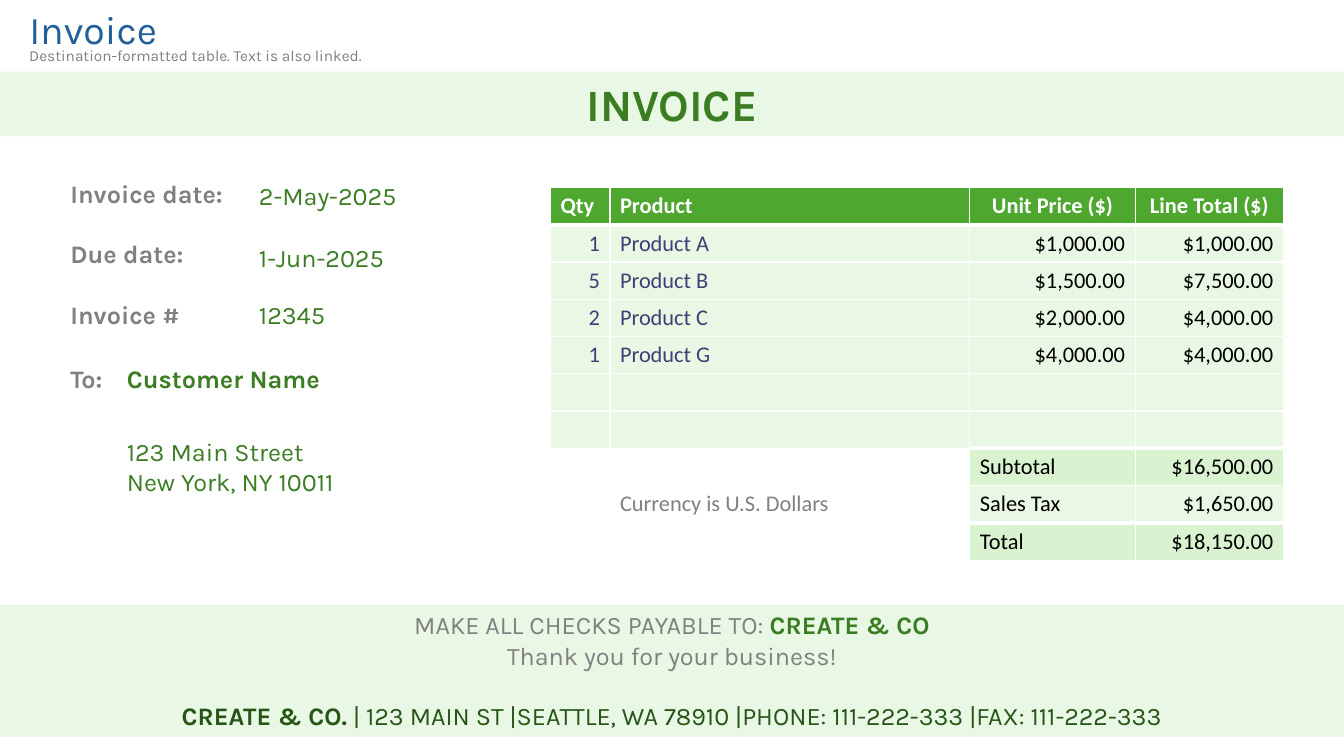
from lxml import etree
from pptx import Presentation
from pptx.dml.color import RGBColor
from pptx.enum.shapes import MSO_SHAPE
from pptx.enum.text import MSO_ANCHOR, MSO_AUTO_SIZE, PP_ALIGN
from pptx.oxml.ns import qn
from pptx.util import Inches, Pt

RECT = MSO_SHAPE.RECTANGLE
TOP, MIDDLE, BOTTOM = MSO_ANCHOR.TOP, MSO_ANCHOR.MIDDLE, MSO_ANCHOR.BOTTOM
LEFT, CENTER, RIGHT = PP_ALIGN.LEFT, PP_ALIGN.CENTER, PP_ALIGN.RIGHT
NO_FIT = MSO_AUTO_SIZE.NONE

WHITE, BLACK, GRAY = "FFFFFF", "000000", "808080"
BLUE, NAVY = "215F9A", "3F3F76"
GREEN, DARK, HEAD = "3B7D23", "275417", "4EA72E"
PALE, SOFT = "E9F8E4", "D9F2D0"
GAP = 21.5  # one line of 18 pt text

COLS = [0.59, 3.57, 1.64, 1.47]
ALIGNS = [RIGHT, LEFT, RIGHT, RIGHT]
ROWS = [
    ["Qty", "Product", "Unit Price ($)", "Line Total ($)"],
    ["1", "Product A", "$1,000.00", "$1,000.00"],
    ["5", "Product B", "$1,500.00", "$7,500.00"],
    ["2", "Product C", "$2,000.00", "$4,000.00"],
    ["1", "Product G", "$4,000.00", "$4,000.00"],
    ["", "", "", ""],
    ["", "", "", ""],
    ["", "", "Subtotal", "$16,500.00"],
    ["", "Currency is U.S. Dollars", "Sales Tax", "$1,650.00"],
    ["", "", "Total", "$18,150.00"],
]
SUMS = 7  # first row of the totals


def rgb(code):
    return RGBColor.from_string(code)


def style(run, size, color, bold=False, face="Karla"):
    run.font.size = Pt(size)
    run.font.name = face
    run.font.bold = bold
    run.font.color.rgb = rgb(color)


def label(slide, box, text, color, bold=False, size=18, gap=0):
    """Add a text box; gap is the space in points between paragraphs."""
    frame = slide.shapes.add_textbox(*map(Inches, box)).text_frame
    frame.word_wrap = True
    frame.text = text
    for i, para in enumerate(frame.paragraphs):
        para.space_before = Pt(gap if i else 0)
        for run in para.runs:
            style(run, size, color, bold)


def band(slide, box, lines, size):
    """Add a full-width band; each line is a list of (text, color, bold)."""
    shape = slide.shapes.add_shape(RECT, *map(Inches, box))
    shape.shadow.inherit = False
    shape.fill.solid()
    shape.fill.fore_color.rgb = rgb(PALE)
    shape.line.fill.background()
    frame = shape.text_frame
    frame.vertical_anchor = TOP
    for i, line in enumerate(lines):
        para = frame.add_paragraph() if i else frame.paragraphs[0]
        para.alignment = CENTER
        for text, color, bold in line:
            run = para.add_run()
            run.text = text
            style(run, size, color, bold)
    return frame


def heading(slide, box):
    # Title and the line under it
    x, y, w, h = box
    title = slide.shapes.title
    title.left, title.top, title.width, title.height = map(Inches, box)
    frame = title.text_frame
    frame.text = "Invoice"
    frame.auto_size = NO_FIT
    frame.vertical_anchor = MIDDLE
    para = frame.paragraphs[0]
    para.alignment = LEFT
    para.line_spacing = 0.9
    style(para.runs[0], 28, BLUE)
    label(slide, (x, y + 0.41, 5.19, 0.29),
          "Destination-formatted table. Text is also linked.", GRAY, size=11)


def details(slide, box):
    # Dates and number
    x, y, w, h = box
    label(slide, (x, y, 1.93, 1.62), "Invoice date:\nDue date:\nInvoice #",
          GRAY, True, gap=GAP)
    values = [(0.02, "2-May-2025"), (0.63, "1-Jun-2025"), (1.2, "12345")]
    for drop, text in values:
        label(slide, (x + 1.87, y + drop, 2.91, 0.4), text, GREEN)
    # Customer
    label(slide, (x, y + 1.84, 0.84, 0.4), "To:", GRAY, True)
    label(slide, (x + 0.56, y + 1.84, 4.07, 0.4), "Customer Name", GREEN, True)
    label(slide, (x + 0.56, y + 2.56, 4.07, 0.71),
          "123 Main Street\vNew York, NY 10011", GREEN)


def edge(cell, side, width):
    line = etree.SubElement(cell._tc.get_or_add_tcPr(), qn("a:ln" + side),
                            w=str(Pt(width)))
    fill = etree.SubElement(line, qn("a:solidFill"))
    etree.SubElement(fill, qn("a:srgbClr"), val=WHITE)


def rule(row, col):
    """Width of the line below a row."""
    return 3 if row == 0 or (row in (6, 8) and col > 1) else 1


def look(row, col):
    """Fill, text color and alignment of a cell."""
    if row == 0:
        return HEAD, WHITE, CENTER if col > 1 else LEFT
    if row < SUMS:
        return PALE, NAVY if col < 2 else BLACK, ALIGNS[col]
    if col < 2:
        return None, GRAY, LEFT
    return PALE if row == 8 else SOFT, BLACK, RIGHT if col == 3 else LEFT


def items(slide, box):
    table = slide.shapes.add_table(len(ROWS), len(COLS),
                                   *map(Inches, box)).table
    table.first_row = table.horz_banding = False
    for column, width in zip(table.columns, COLS):
        column.width = Inches(width)
    for r, texts in enumerate(ROWS):
        table.rows[r].height = Inches(box[3] / len(ROWS))
        for c, text in enumerate(texts):
            cell = table.cell(r, c)
            fill, color, align = look(r, c)
            # Borders go ahead of the fill
            for side, width in (("L", 1), ("R", 1), ("T", rule(r - 1, c)),
                                ("B", rule(r, c))):
                edge(cell, side, width)
            if fill:
                cell.fill.solid()
                cell.fill.fore_color.rgb = rgb(fill)
            else:
                cell.fill.background()
            cell.vertical_anchor = BOTTOM
            para = cell.text_frame.paragraphs[0]
            para.alignment = align
            if text:
                para.text = text
                style(para.runs[0], 16, color, r == 0, "Calibri")
            else:
                etree.SubElement(para._p, qn("a:endParaRPr"), sz="1600")


def footer(slide, box):
    frame = band(slide, box, [
        [("MAKE ALL CHECKS PAYABLE TO: ", GRAY, False),
         ("CREATE & CO", GREEN, True)],
        [("Thank you for your business!", GRAY, False)],
        [("CREATE & CO.", DARK, True),
         (" | 123 MAIN ST |SEATTLE, WA 78910 |PHONE: 111-222-333 "
          "|FAX: 111-222-333", DARK, False)],
    ], 18)
    frame.paragraphs[2].space_before = Pt(GAP)


def main():
    deck = Presentation()
    deck.slide_width, deck.slide_height = Inches(13.33), Inches(7.5)
    slide = deck.slides.add_slide(deck.slide_layouts[5])
    heading(slide, (0.19, 0, 11.5, 0.64))
    band(slide, (0, 0.71, 13.33, 0.64), [[("INVOICE", GREEN, True)]], 32)
    details(slide, (0.6, 1.72, 4.78, 3.27))
    items(slide, (5.46, 1.86, 7.27, 3.7))
    footer(slide, (0, 6, 13.33, 1.31))
    deck.save("out.pptx")


if __name__ == "__main__":
    main()
